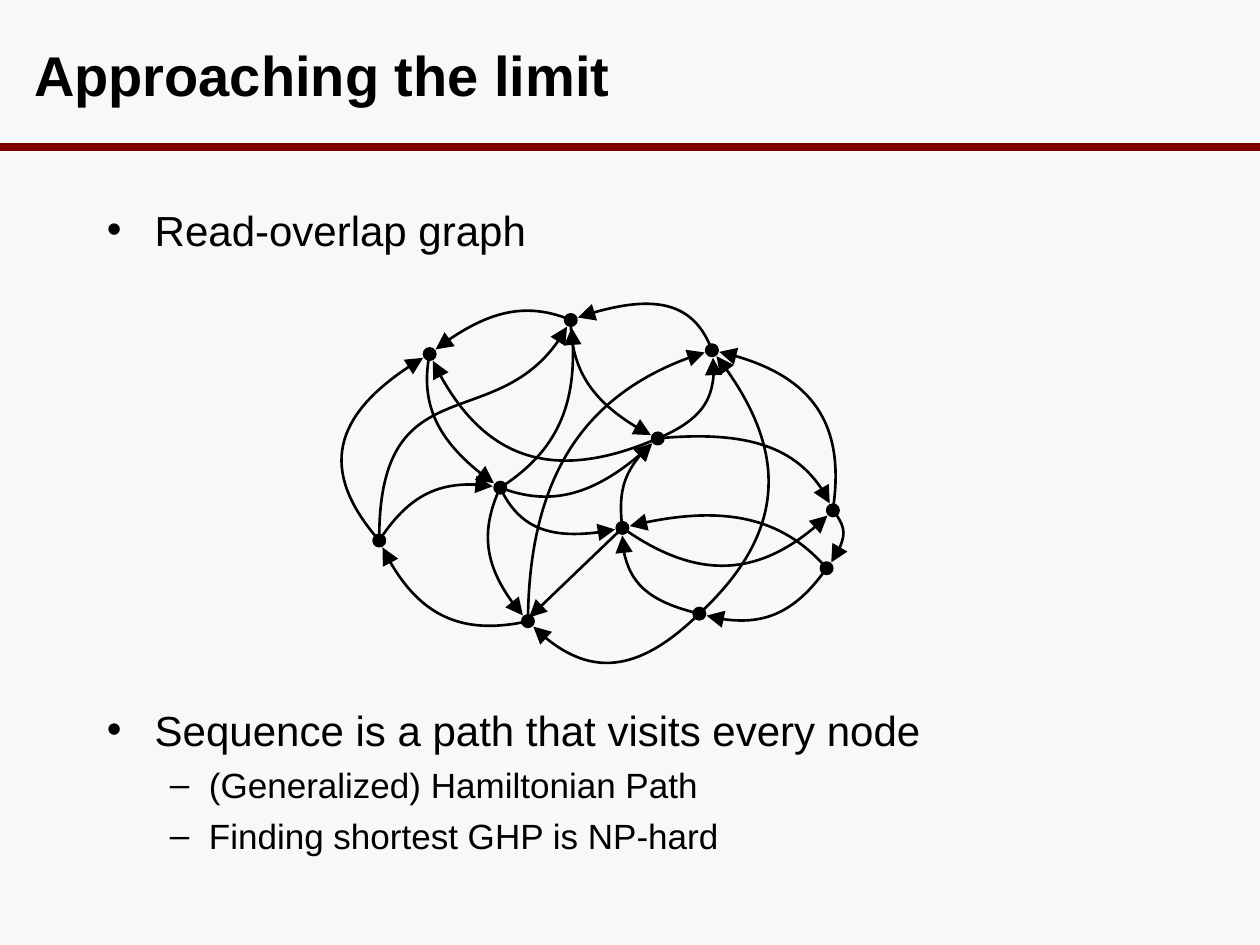
from math import hypot

from lxml.etree import SubElement
from pptx import Presentation
from pptx.dml.color import RGBColor
from pptx.enum.shapes import MSO_CONNECTOR, MSO_SHAPE
from pptx.enum.text import MSO_ANCHOR, PP_ALIGN
from pptx.oxml.ns import qn
from pptx.util import Inches, Pt

COLORS = {"background": "F8F8FA", "ink": "000000", "rule": "800000"}
NODE_SIZE = 0.09
ARROW_GAP = 0.06

NODES = {
    "a": (5.22, 3.48), "b": (3.97, 3.87), "c": (4.53, 2.54), "d": (4.94, 4.19),
    "e": (3.41, 2.81), "f": (5.65, 2.78), "g": (3.01, 4.29), "h": (4.19, 4.93),
    "i": (5.55, 4.87), "j": (6.56, 4.51), "k": (6.61, 4.05),
}

MIDPOINTS = {
    "ih": (4.85, 5.24), "hf": (4.56, 3.54), "dk": (5.8, 4.47), "kf": (6.45, 3.22),
    "ge": (2.75, 3.51), "fc": (5.27, 2.44), "ce": (4, 2.5), "hg": (3.5, 4.86),
    "bh": (3.9, 4.4), "ji": (6.12, 4.87), "jd": (5.9, 4.13), "kj": (6.68, 4.26),
    "id": (5.09, 4.63), "ak": (6.11, 3.57), "da": (4.98, 3.8), "bc": (4.44, 3.33),
    "gb": (3.42, 3.92), "af": (5.58, 3.2), "if": (6.08, 3.88), "ba": (4.58, 3.89),
    "bd": (4.32, 4.19), "ca": (4.7, 3.07), "ae": (4.15, 3.58), "eb": (3.49, 3.37),
}


def write(para, text, size=24, bold=False, before=0, bullet=None, margin=0, hanging=0):
    para.alignment = PP_ALIGN.LEFT
    para.space_before = Pt(before)
    span = para.add_run()
    span.text = text
    span.font.name = "Arial"
    span.font.size = Pt(size)
    span.font.bold = bold
    span.font.color.rgb = RGBColor.from_string(COLORS["ink"])
    if bullet:
        properties = para._p.get_or_add_pPr()
        properties.set("marL", str(Inches(margin)))
        properties.set("indent", str(-Inches(hanging)))
        SubElement(properties, qn("a:buFont"), typeface="Arial")
        SubElement(properties, qn("a:buChar"), char=bullet)


def style_line(shape, color="ink", width=1.5, arrow=False):
    shape.line.color.rgb = RGBColor.from_string(COLORS[color])
    shape.line.width = Pt(width)
    SubElement(shape.element.spPr, qn("a:effectLst"))
    if arrow:
        outline = shape.line._get_or_add_ln()
        SubElement(outline, qn("a:headEnd"), type="oval")
        SubElement(outline, qn("a:tailEnd"), type="triangle", w="lg", len="lg")


deck = Presentation()
deck.slide_width = Inches(10)
deck.slide_height = Inches(7.5)
page = deck.slides.add_slide(deck.slide_layouts[5])
page.background.fill.solid()
page.background.fill.fore_color.rgb = RGBColor.from_string(COLORS["background"])

rule = page.shapes.add_connector(
    MSO_CONNECTOR.STRAIGHT, Inches(0), Inches(1.17), Inches(10), Inches(1.17))
style_line(rule, color="rule", width=4.5)

title = page.shapes.title
title.left, title.top = Inches(0.17), Inches(0.17)
title.width, title.height = Inches(9.83), Inches(0.83)
title.text_frame.vertical_anchor = MSO_ANCHOR.MIDDLE
write(title.text_frame.paragraphs[0], "Approaching the limit", size=32, bold=True)

body = page.shapes.add_textbox(Inches(0.75), Inches(1.57), Inches(8.5), Inches(5.75))
frame = body.text_frame
frame.word_wrap = True
main_level = {"size": 24, "bullet": "•", "margin": 0.38, "hanging": 0.38}
sub_level = {"size": 20, "bullet": "–", "margin": 0.81, "hanging": 0.31}
write(frame.paragraphs[0], "Read-overlap graph", before=3, **main_level)
for text, before, level in [
    ("Sequence is a path that visits every node", 257, main_level),
    ("(Generalized) Hamiltonian Path", 5, sub_level),
    ("Finding shortest GHP is NP-hard", 5, sub_level),
]:
    write(frame.add_paragraph(), text, before=before, **level)

graph = page.shapes.add_group_shape()
straight_edge = graph.shapes.add_connector(
    MSO_CONNECTOR.STRAIGHT, Inches(4.93), Inches(4.2), Inches(4.2), Inches(4.9))
style_line(straight_edge, arrow=True)

controls = {"gc": [(3, 2.9), (4, 3.5)]}
for (source, target), middle in MIDPOINTS.items():
    ends = NODES[source], NODES[target]
    peak = [2 * m - (s + t) / 2 for m, s, t in zip(middle, *ends)]
    controls[source + target] = [
        [(e + 2 * p) / 3 for e, p in zip(end, peak)] for end in ends]

for (source, target), (leaving, arriving) in controls.items():
    x, y = NODES[target]
    dx, dy = arriving[0] - x, arriving[1] - y
    shift = ARROW_GAP / hypot(dx, dy)
    tip = x + dx * shift, y + dy * shift
    start, *rest = [
        (Inches(px), Inches(py)) for px, py in (NODES[source], leaving, arriving, tip)]
    builder = graph.shapes.build_freeform(*start)
    builder.add_line_segments(rest, close=False)
    edge = builder.convert_to_shape()
    edge.fill.background()
    style_line(edge, arrow=True)
    curve, *others = edge.element.xpath(".//a:lnTo")
    curve.tag = qn("a:cubicBezTo")
    for segment in others:
        curve.append(segment[0])
        segment.getparent().remove(segment)

for x, y in NODES.values():
    node = graph.shapes.add_shape(
        MSO_SHAPE.OVAL, Inches(x - NODE_SIZE / 2), Inches(y - NODE_SIZE / 2),
        Inches(NODE_SIZE), Inches(NODE_SIZE))
    node.fill.solid()
    node.fill.fore_color.rgb = RGBColor.from_string(COLORS["ink"])
    style_line(node)

deck.save("out.pptx")
